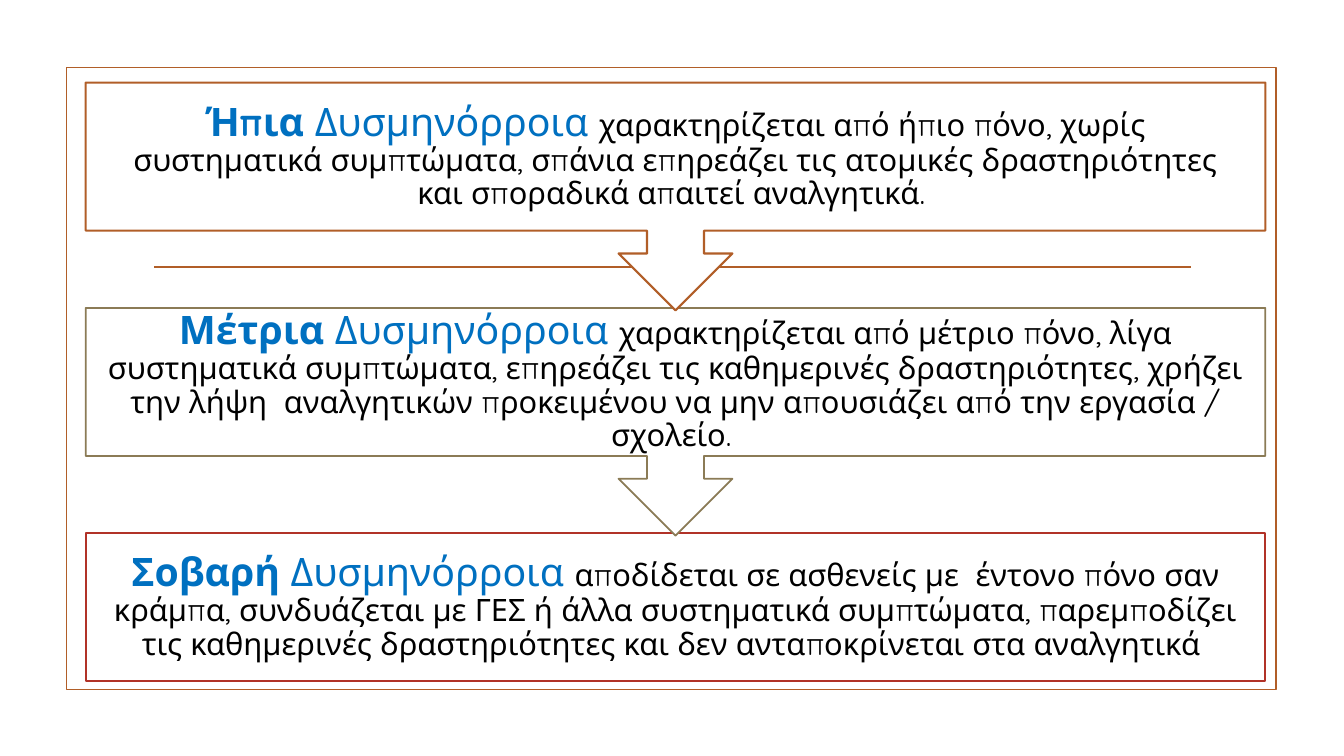
from pptx import Presentation
from pptx.dml.color import RGBColor
from pptx.enum.shapes import MSO_CONNECTOR, MSO_SHAPE
from pptx.enum.text import MSO_ANCHOR, PP_ALIGN
from pptx.oxml.ns import qn
from pptx.util import Inches, Pt
from lxml.etree import SubElement

FONT = "Quicksand"
RUST, OLIVE, RED = "B15E28", "8B7B56", "B13228"
BOX_H, ARROW_H, PITCH = 1.47, 2.26, 2.235

GRADES = [
    ("Ήπια", "χαρακτηρίζεται από ήπιο πόνο, χωρίς συστηματικά συμπτώματα, σπάνια "
     "επηρεάζει τις ατομικές δραστηριότητες και σποραδικά απαιτεί αναλγητικά. ", RUST, 1.5),
    ("Μέτρια", "χαρακτηρίζεται από μέτριο πόνο, λίγα συστηματικά συμπτώματα, επηρεάζει "
     "τις καθημερινές δραστηριότητες, χρήζει την λήψη  αναλγητικών προκειμένου να μην "
     "απουσιάζει από την εργασία / σχολείο. ", OLIVE, 1.25),
    ("Σοβαρή", "αποδίδεται σε ασθενείς με  έντονο πόνο σαν κράμπα, συνδυάζεται με ΓΕΣ ή "
     "άλλα συστηματικά συμπτώματα, παρεμποδίζει τις καθημερινές δραστηριότητες και δεν "
     "ανταποκρίνεται στα αναλγητικά ", RED, 1.25),
]


def color(value):
    """Turn a hex string into a colour."""
    return RGBColor.from_string(value)


def add_outline(s, kind, box, line, width, fill=None):
    """Add an outlined shape in the given box."""
    sp = s.shapes.add_shape(kind, *map(Inches, box))
    sp.shadow.inherit = False
    if fill:
        sp.fill.solid()
        sp.fill.fore_color.rgb = color(fill)
    else:
        sp.fill.background()
    sp.line.color.rgb = color(line)
    sp.line.width = Pt(width)
    return sp


def add_backdrop(s, x, y, w, h):
    """Draw the slide frame and its horizontal rule."""
    add_outline(s, MSO_SHAPE.RECTANGLE, (x, y, w, h), RUST, 1.25)
    rule_y = Inches(y + 1.98)
    rule = s.shapes.add_connector(
        MSO_CONNECTOR.STRAIGHT, Inches(x + 0.87), rule_y, Inches(x + w - 0.85), rule_y)
    rule.line.color.rgb = color(RUST)
    rule.line.width = Pt(1.25)
    SubElement(rule._element.spPr, qn("a:effectLst"))


def write_grade(sp, name, description):
    """Write the grade heading and its description."""
    tf = sp.text_frame
    tf.word_wrap = True
    tf.vertical_anchor = MSO_ANCHOR.MIDDLE
    tf.margin_left = tf.margin_right = tf.margin_top = tf.margin_bottom = Inches(0.22)
    p = tf.paragraphs[0]
    p.alignment = PP_ALIGN.CENTER
    p.line_spacing = 0.9
    runs = [(name, 28, "0070C0", True), (" Δυσμηνόρροια ", 28, "0070C0", False),
            (description, 22, "000000", False)]
    for text, size, ink, bold in runs:
        r = p.add_run()
        r.text = text
        r.font.name = FONT
        r.font.size = Pt(size)
        r.font.bold = bold
        r.font.color.rgb = color(ink)


def add_grades(s, x, y, w):
    """Stack the grades, each one pointing down to the next."""
    last = len(GRADES) - 1
    for i, (name, description, line, width) in reversed(list(enumerate(GRADES))):
        kind, h = ((MSO_SHAPE.RECTANGLE, BOX_H) if i == last
                   else (MSO_SHAPE.DOWN_ARROW_CALLOUT, ARROW_H))
        sp = add_outline(s, kind, (x, y + i * PITCH, w, h), line, width, "FFFFFF")
        write_grade(sp, name, description)


def main():
    """Build the slide and save it."""
    prs = Presentation()
    prs.slide_width, prs.slide_height = Inches(13.33), Inches(7.5)
    s = prs.slides.add_slide(prs.slide_layouts[6])
    add_backdrop(s, 0.66, 0.67, 12, 6.17)
    add_grades(s, 0.85, 0.82, 11.7)
    prs.save("out.pptx")


if __name__ == "__main__":
    main()
